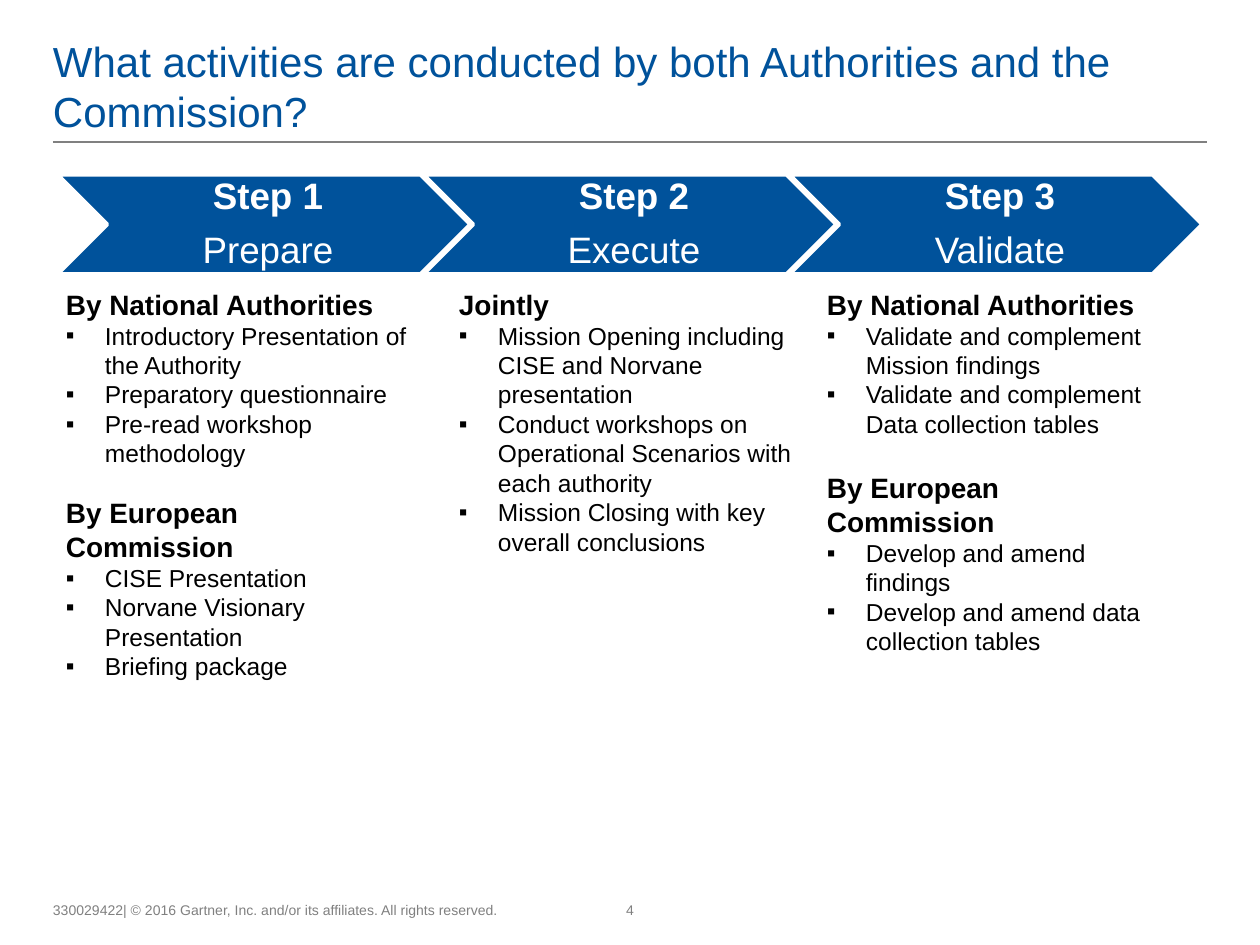
from pptx import Presentation
from pptx.dml.color import RGBColor
from pptx.enum.shapes import MSO_CONNECTOR, MSO_SHAPE
from pptx.enum.text import MSO_ANCHOR, MSO_AUTO_SIZE, PP_ALIGN
from pptx.oxml.ns import qn
from pptx.util import Pt
from lxml import etree

CHEVRON = MSO_SHAPE.CHEVRON
STRAIGHT = MSO_CONNECTOR.STRAIGHT
BOTTOM, MIDDLE, TOP = MSO_ANCHOR.BOTTOM, MSO_ANCHOR.MIDDLE, MSO_ANCHOR.TOP
LEFT, CENTER = PP_ALIGN.LEFT, PP_ALIGN.CENTER
NO_FIT = MSO_AUTO_SIZE.NONE
COLORS = {"blue": "00529B", "grey": "808080", "white": "FFFFFF", "black": "000000"}
SCALE = 914400 / 126  # EMU per px


def px(*values):
    return [round(v * SCALE) for v in values]


def write(tf, lines, anchor, align, color, margins):
    """Fill a text frame with (text, size, bold) lines."""
    tf.word_wrap = True
    tf.auto_size = NO_FIT
    tf.vertical_anchor = anchor
    tf.margin_left, tf.margin_top, tf.margin_right, tf.margin_bottom = px(*margins)
    tf.text = "\n".join(text for text, size, bold in lines)
    for p, (text, size, bold) in zip(tf.paragraphs, lines):
        p.alignment = align
        font = p.runs[0].font
        font.name, font.size, font.bold = "Arial", Pt(size), bold
        font.color.rgb = RGBColor.from_string(COLORS[color])


prs = Presentation()
prs.slide_width, prs.slide_height = px(1260, 945)
s = prs.slides.add_slide(prs.slide_layouts[5])

# Title and rule
title = s.shapes.title
title.left, title.top, title.width, title.height = px(53, 0, 1154, 142)
write(title.text_frame,
      [("What activities are conducted by both Authorities and the Commission?", 24, False)],
      BOTTOM, LEFT, "blue", (0, 6, 13, 6))
rule = s.shapes.add_connector(STRAIGHT, *px(53, 142, 1207, 142))
rule.line.color.rgb = RGBColor.from_string(COLORS["grey"])
rule.line.width = Pt(1)
etree.SubElement(rule._element.spPr, qn("a:effectLst"))

# Step arrows
for i, step in enumerate(["Prepare", "Execute", "Validate"]):
    sp = s.shapes.add_shape(CHEVRON, *px(58 + 366 * i, 175, 412, 99))
    sp.shadow.inherit = False
    sp.fill.solid()
    sp.fill.fore_color.rgb = RGBColor.from_string(COLORS["blue"])
    sp.line.color.rgb = RGBColor.from_string(COLORS["white"])
    sp.line.width = Pt(2)
    tf = sp.text_frame
    write(tf, [(f"Step {i + 1}", 21, True), (step, 21, False)],
          MIDDLE, CENTER, "white", (12, 4, 4, 4))
    for p in tf.paragraphs:
        p.line_spacing = 0.9
    tf.paragraphs[0].space_after = Pt(8.5)

# Activity columns: left, gap before the second heading, then heading and bullets
columns = [
    (53, 16, [
        ("By National Authorities", ["Introductory Presentation of the Authority",
                                     "Preparatory questionnaire",
                                     "Pre-read workshop methodology"]),
        ("By European Commission", ["CISE Presentation",
                                    "Norvane Visionary Presentation",
                                    "Briefing package"])]),
    (446, 0, [
        ("Jointly", ["Mission Opening including CISE and Norvane presentation",
                     "Conduct workshops on Operational Scenarios with each authority",
                     "Mission Closing with key overall conclusions"])]),
    (814, 18.5, [
        ("By National Authorities", ["Validate and complement Mission findings",
                                     "Validate and complement Data collection tables"]),
        ("By European Commission", ["Develop and amend findings",
                                    "Develop and amend data collection tables"])]),
]
for left, gap, groups in columns:
    lines = []
    for heading, items in groups:
        lines.append((heading, 16, True))
        lines += [(item, 14, False) for item in items]
    tf = s.shapes.add_textbox(*px(left, 281, 367, 475)).text_frame
    write(tf, lines, TOP, LEFT, "black", (13, 6, 13, 6))
    for n, (p, (text, size, bold)) in enumerate(zip(tf.paragraphs, lines)):
        if not bold:
            pPr = p._p.get_or_add_pPr()
            indent = px(39)[0]
            pPr.set("marL", str(indent))
            pPr.set("indent", str(-indent))
            etree.SubElement(pPr, qn("a:buFont"), typeface="Arial")
            etree.SubElement(pPr, qn("a:buChar"), char="▪")
        elif n:
            p.space_before = Pt(gap)

# Footer
footers = [
    ("330029422| © 2016 Gartner, Inc. and/or its affiliates. All rights reserved.",
     53, 504, LEFT, 13),
    ("4", 510, 240, CENTER, 0),
]
for text, left, width, align, right_margin in footers:
    tf = s.shapes.add_textbox(*px(left, 861, width, 63)).text_frame
    write(tf, [(text, 8, False)], BOTTOM, align, "grey", (0, 6, right_margin, 6))

prs.save("out.pptx")
